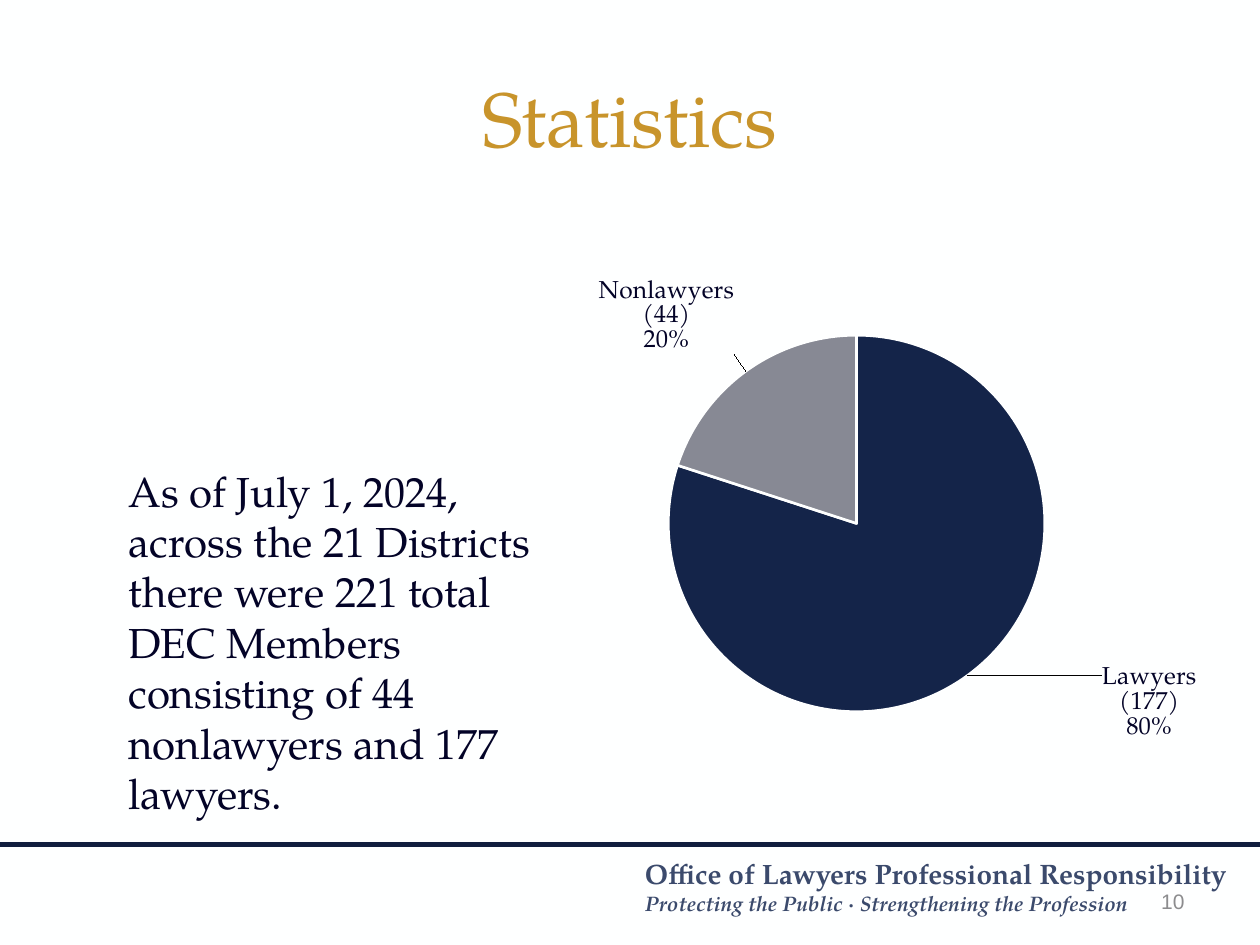
from lxml import etree
from pptx import Presentation
from pptx.chart.data import CategoryChartData
from pptx.dml.color import RGBColor
from pptx.enum.chart import XL_CHART_TYPE, XL_LABEL_POSITION
from pptx.enum.shapes import MSO_CONNECTOR, MSO_SHAPE
from pptx.enum.text import MSO_ANCHOR, PP_ALIGN
from pptx.oxml import parse_xml
from pptx.oxml.ns import nsdecls, qn
from pptx.util import Cm, Pt

PIE = XL_CHART_TYPE.PIE
OUTSIDE = XL_LABEL_POSITION.OUTSIDE_END
STRAIGHT = MSO_CONNECTOR.STRAIGHT
RECTANGLE = MSO_SHAPE.RECTANGLE
MIDDLE, TOP = MSO_ANCHOR.MIDDLE, MSO_ANCHOR.TOP
LEFT, CENTER, RIGHT = PP_ALIGN.LEFT, PP_ALIGN.CENTER, PP_ALIGN.RIGHT

SERIF, SANS = "TeX Gyre Pagella", "Arial"
PAPER, INK, NAVY = "FEFFFF", "030327", "111E3E"
GOLD, SLATE, GREY = "C8942B", "3B4A6C", "8C8C8E"
SLIDE_W, SLIDE_H, FOOTER_TOP = 25.4, 19.05, 17.02

# category, value, slice colour, label shift as a share of the chart size
SLICES = [
    ("Lawyers (177)", 80, "142449", (0.18, -0.03)),
    ("Nonlawyers (44)", 20, "878994", (-0.01, -0.02)),
]


def rgb(value):
    return RGBColor.from_string(value)


def style_font(font, color, **values):
    font.color.rgb = rgb(color)
    for name, value in values.items():
        setattr(font, name, value)


def write(tf, lines, anchor=TOP, align=LEFT):
    """Fill a text frame from (text, colour, font values) lines."""
    tf.word_wrap = True
    tf.vertical_anchor = anchor
    for i, (text, color, values) in enumerate(lines):
        p = tf.paragraphs[0] if i == 0 else tf.add_paragraph()
        p.alignment = align
        r = p.add_run()
        r.text = text
        style_font(r.font, color, **values)


def add_text(s, box, lines, **layout):
    sp = s.shapes.add_textbox(*map(Cm, box))
    write(sp.text_frame, lines, **layout)


def add_footer(s):
    sp = s.shapes.add_shape(RECTANGLE, Cm(0), Cm(FOOTER_TOP),
                            Cm(SLIDE_W), Cm(SLIDE_H - FOOTER_TOP))
    sp.shadow.inherit = False
    sp.fill.solid()
    sp.fill.fore_color.rgb = rgb(PAPER)
    sp.line.fill.background()

    rule = s.shapes.add_connector(STRAIGHT, Cm(0), Cm(FOOTER_TOP),
                                  Cm(SLIDE_W), Cm(FOOTER_TOP))
    rule.line.color.rgb = rgb(NAVY)
    rule.line.width = Pt(3)
    etree.SubElement(rule._element.spPr, qn("a:effectLst"))

    bold = dict(name=SERIF, bold=True)
    add_text(s, (12.75, 17.15, 13.08, 2.13), [
        ("Office of Lawyers Professional Responsibility", SLATE,
         dict(bold, size=Pt(16))),
        ("Protecting the Public · Strengthening the Profession", SLATE,
         dict(bold, size=Pt(12), italic=True)),
    ])


def add_title(s, text):
    title = s.shapes.title
    title.left, title.top, title.width, title.height = map(
        Cm, (1.27, 0.76, 22.86, 3.18))
    write(title.text_frame, [(text, GOLD, dict(name=SERIF, size=Pt(44)))],
          anchor=MIDDLE, align=CENTER)


def manual_layout(x, y, size=None):
    """Layout element: a label shift, or the inner plot area if size is given."""
    values = [("x", x), ("y", y)]
    if size:
        values = ([("layoutTarget", "inner"), ("xMode", "edge"), ("yMode", "edge")]
                  + values + [("w", size[0]), ("h", size[1])])
    items = "".join(f'<c:{tag} val="{value}"/>' for tag, value in values)
    return parse_xml(f'<c:layout {nsdecls("c")}><c:manualLayout>{items}'
                     '</c:manualLayout></c:layout>')


def place_label(label, shift):
    """Show category over percentage and move the label by shift."""
    label.find(qn("c:idx")).addnext(manual_layout(*shift))
    for tag, shown in (("showVal", 0), ("showCatName", 1), ("showPercent", 1)):
        label.find(qn(f"c:{tag}")).set("val", str(shown))
    etree.SubElement(label, qn("c:separator")).text = "\n"


def add_pie(s):
    data = CategoryChartData()
    data.categories = [name for name, *_ in SLICES]
    data.add_series("Series 1", [value for _, value, *_ in SLICES])
    box = map(Cm, (9.53, 5.13, 14.6, 10.74))
    chart = s.shapes.add_chart(PIE, *box, data).chart
    chart.has_title = chart.has_legend = False
    style_font(chart.font, INK, name=SANS, size=Pt(10))

    plot = chart.plots[0]
    plot.vary_by_categories = True
    series = plot.series[0]
    label_font = dict(name=SERIF, size=Pt(14))
    labels = series.data_labels
    for name, value in dict(show_value=False, show_category_name=True,
                            show_percentage=True, position=OUTSIDE).items():
        setattr(labels, name, value)
    style_font(labels.font, INK, **label_font)

    for i, (_, _, color, _) in enumerate(SLICES):
        point = series.points[i]
        point.format.fill.solid()
        point.format.fill.fore_color.rgb = rgb(color)
        point.format.line.color.rgb = rgb(PAPER)
        point.format.line.width = Pt(1.5)
        style_font(point.data_label.font, INK, **label_font)
        point.data_label.position = OUTSIDE
    for label, (*_, shift) in zip(series._element.iter(qn("c:dLbl")), SLICES):
        place_label(label, shift)

    area = plot._element.getparent()
    for old in area.findall(qn("c:layout")):
        area.remove(old)
    area.insert(0, manual_layout(0.27, 0.15, (0.52, 0.71)))


def main():
    prs = Presentation()
    prs.slide_width, prs.slide_height = Cm(SLIDE_W), Cm(SLIDE_H)
    s = prs.slides.add_slide(prs.slide_layouts.get_by_name("Title Only"))
    s.background.fill.solid()
    s.background.fill.fore_color.rgb = rgb(PAPER)

    add_footer(s)
    add_title(s, "Statistics")
    add_text(s, (18.21, 17.65, 5.92, 1.02),
             [("10", GREY, dict(name=SANS, size=Pt(12)))],
             anchor=MIDDLE, align=RIGHT)
    add_pie(s)
    add_text(s, (2.34, 9.25, 8.89, 7.44), [
        ("As of July 1, 2024, across the 21 Districts there were 221 total "
         "DEC Members consisting of 44 nonlawyers and 177 lawyers.", INK,
         dict(name=SERIF, size=Pt(24))),
    ])
    prs.save("out.pptx")


if __name__ == "__main__":
    main()
